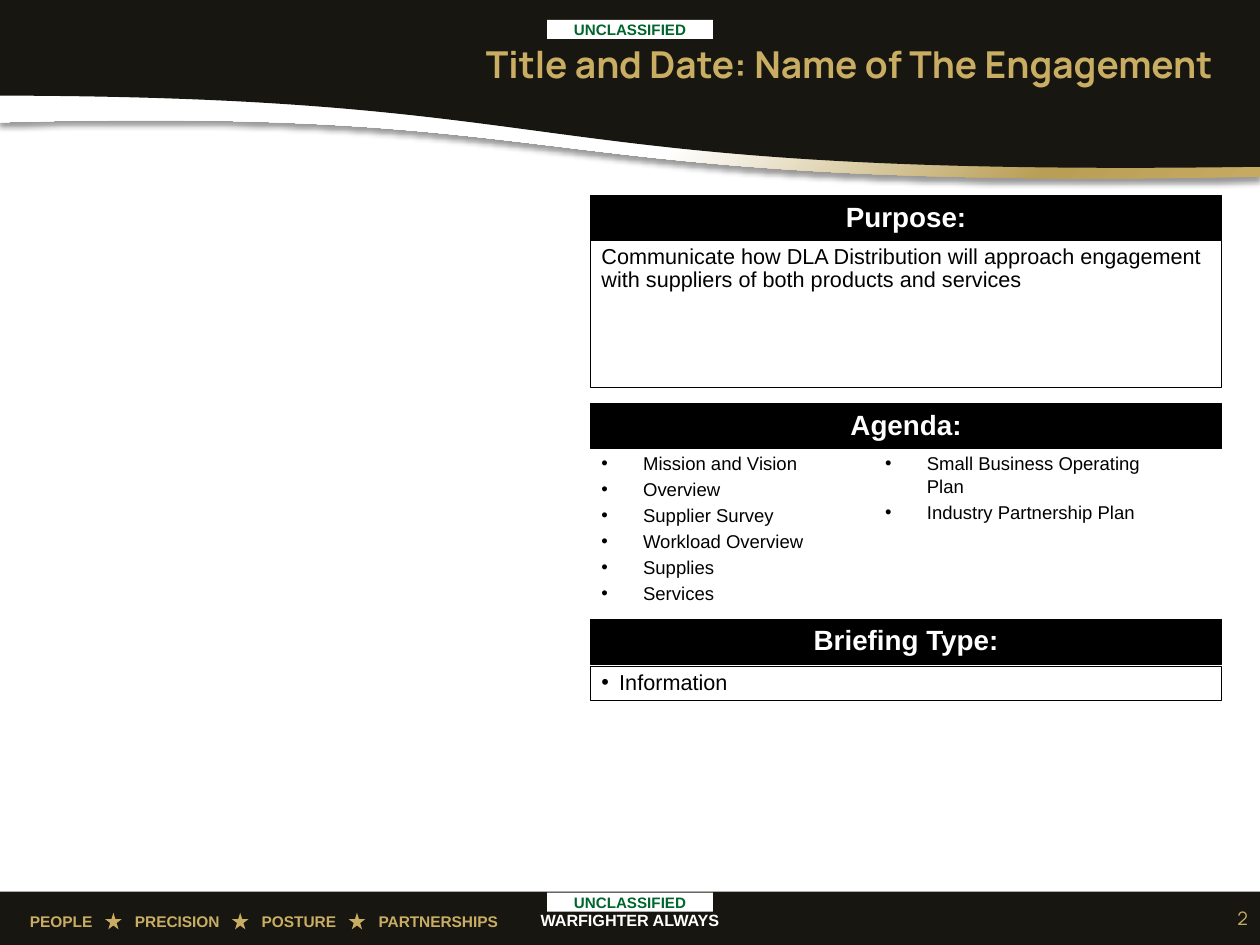
from dataclasses import dataclass

from lxml import etree
from pptx import Presentation
from pptx.dml.color import RGBColor
from pptx.enum.shapes import MSO_SHAPE
from pptx.enum.text import MSO_ANCHOR, PP_ALIGN
from pptx.oxml import parse_xml
from pptx.oxml.ns import nsdecls, qn
from pptx.util import Inches, Pt

RECT, STAR = MSO_SHAPE.RECTANGLE, MSO_SHAPE.STAR_5_POINT
TOP, MID = MSO_ANCHOR.TOP, MSO_ANCHOR.MIDDLE
LEFT, CENTER, RIGHT = PP_ALIGN.LEFT, PP_ALIGN.CENTER, PP_ALIGN.RIGHT

CELL = Inches(0.1)
COLS, ROWS = 113.3, 85
DARK, GOLD, GREEN = "171610", "C9AD62", "00662E"
BLACK, WHITE = "000000", "FFFFFF"
SIDE, SPAN, HEAD = 53.1, 56.75, 4.05


@dataclass(frozen=True)
class Box:
    col: float
    row: float
    wide: float
    high: float


@dataclass(frozen=True)
class Style:
    size: float
    color: str
    bold: bool = False
    align: int = LEFT
    anchor: int = TOP
    font: str = "Arial"
    dent: float = 0
    lead: float = 1
    before: float = 0
    after: float = 0


@dataclass(frozen=True)
class Panel:
    row: float
    title: str
    body: str = ""
    start: float = 0
    high: float = 0
    dent: float = 0
    after: float = 0


PANELS = [
    Panel(17.6, "Purpose:",
          "Communicate how DLA Distribution will approach engagement "
          "with suppliers of both products and services", 21.6, 13.25, after=5.1),
    Panel(36.3, "Agenda:"),
    Panel(55.7, "Briefing Type:", "Information", 59.92, 3.1, 1.6),
]
TOPICS = [
    "Mission and Vision", "Overview", "Supplier Survey",
    "Workload Overview", "Supplies", "Services",
    "Small Business Operating Plan", "Industry Partnership Plan",
]
VALUES = ["PEOPLE", "PRECISION", "POSTURE", "PARTNERSHIPS"]
STARS = [9.45, 20.85, 31.35]


def cells(count: float) -> int:
    return round(count * CELL)


def place(box: Box) -> list[int]:
    return [cells(n) for n in (box.col, box.row, box.wide, box.high)]


def tint(name: str) -> RGBColor:
    return RGBColor.from_string(name)


def paint(shape, fill: str, line: str = ""):
    shape.shadow.inherit = False
    shape.fill.solid()
    shape.fill.fore_color.rgb = tint(fill)
    if line:
        shape.line.color.rgb = tint(line)
        shape.line.width = Pt(0.75)
    else:
        shape.line.fill.background()
    return shape


def write(shape, lines: list[str], style: Style):
    frame = shape.text_frame
    frame.word_wrap = True
    frame.vertical_anchor = style.anchor
    frame.text = "\n".join(lines)
    for index, para in enumerate(frame.paragraphs):
        if style.dent:
            props = para._p.get_or_add_pPr()
            props.set("marL", str(cells(style.dent)))
            props.set("indent", str(-cells(style.dent)))
            etree.SubElement(props, qn("a:buFont")).set("typeface", style.font)
            etree.SubElement(props, qn("a:buChar")).set("char", "•")
            para.font.size = Pt(style.size)
        para.alignment = style.align
        para.line_spacing = style.lead
        para.space_before = Pt(style.before if index else 0)
        para.space_after = Pt(style.after)
        for run in para.runs:
            run.font.name = style.font
            run.font.size = Pt(style.size)
            run.font.bold = style.bold
            run.font.color.rgb = tint(style.color)
    return shape


def block(slide, box: Box, fill: str, line: str = "", kind: int = RECT):
    return paint(slide.shapes.add_shape(kind, *place(box)), fill, line)


def label(slide, box: Box, lines: list[str], style: Style):
    return write(slide.shapes.add_textbox(*place(box)), lines, style)


def wave(slide, top: float, curve: list[tuple[float, float]], fill: str):
    left, end = curve[0], curve[-1]
    spots = [(cells(x), cells(y)) for x, y in [(left[0], top), left, end]]
    build = slide.shapes.build_freeform(cells(end[0]), cells(top))
    build.add_line_segments(spots)
    shape = build.convert_to_shape()
    edge = list(shape._element.iter(qn("a:lnTo")))[2]
    bend = etree.Element(qn("a:cubicBezTo"))
    for x, y in curve[1:]:
        etree.SubElement(bend, qn("a:pt"), x=str(cells(x) - shape.left),
                         y=str(cells(y) - shape.top))
    edge.getparent().replace(edge, bend)
    return paint(shape, fill)


def gild(shape) -> None:
    stops = "".join(
        f'<a:gs pos="{share * 1000}"><a:srgbClr val="{color}"/></a:gs>'
        for share, color in [(55, WHITE), (84, "B99E55"), (100, "C7AA61")])
    props = shape._element.spPr
    blend = parse_xml(
        f'<a:gradFill {nsdecls("a")}><a:gsLst>{stops}</a:gsLst>'
        '<a:path path="circle"><a:fillToRect r="100000" b="100000"/></a:path>'
        '</a:gradFill>')
    props.replace(props.find(qn("a:solidFill")), blend)
    props.find(qn("a:effectLst")).append(parse_xml(
        f'<a:outerShdw {nsdecls("a")} blurRad="{Pt(4)}" dist="{Pt(3)}" '
        'dir="5400000" rotWithShape="0"><a:srgbClr val="000000">'
        '<a:alpha val="40000"/></a:srgbClr></a:outerShdw>'))


def frame(slide) -> None:
    gild(wave(slide, 5.9, [(0, 11), (54.9, 9.5), (45.4, 17.2), (COLS, 15.9)], WHITE))
    wave(slide, -0.1, [(-0.1, 8.6), (54.6, 8.7), (45.2, 16), (COLS, 15)], DARK)
    block(slide, Box(0, 80.2, COLS, 4.8), DARK)
    label(slide, Box(44.7, 81.4, 23.9, 2.8), ["WARFIGHTER ALWAYS"],
          Style(10.5, WHITE, True, CENTER))
    motto = label(slide, Box(1.7, 81.5, 46.1, 2.8), ["\t".join(VALUES)],
                  Style(10, GOLD, True))
    tabs = etree.SubElement(motto.text_frame.paragraphs[0]._p.get_or_add_pPr(),
                            qn("a:tabLst"))
    for col in STARS:
        etree.SubElement(tabs, qn("a:tab"), pos=str(cells(col)), algn="l")
        block(slide, Box(col, 82.1, 1.5, 1.5), GOLD, kind=STAR)
    label(slide, Box(109, 80.3, 4.2, 4.5), ["2"],
          Style(12, GOLD, align=RIGHT, anchor=MID, font="Manrope"))
    for row in (1.8, 80.3):
        write(block(slide, Box(49.2, row, 14.9, 1.7), WHITE), ["UNCLASSIFIED"],
              Style(9.8, GREEN, True, CENTER, MID))


def fill(slide) -> None:
    label(slide, Box(21.5, 3.7, 88.5, 4.1), ["Title and Date: Name of The Engagement"],
          Style(24, GOLD, True, RIGHT, MID, "Manrope"))
    for panel in PANELS:
        write(block(slide, Box(SIDE, panel.row, SPAN, HEAD), BLACK, BLACK),
              [panel.title], Style(18, WHITE, True, CENTER, MID, lead=0.9, after=5.1))
        if panel.body:
            style = Style(14, BLACK, dent=panel.dent, lead=0.9, after=panel.after)
            write(block(slide, Box(SIDE, panel.start, SPAN, panel.high), WHITE, BLACK),
                  [panel.body], style)
    agenda = label(slide, Box(SIDE, 40.2, 53, 17.6), TOPICS,
                   Style(12, BLACK, dent=3.75, before=2.4))
    agenda.text_frame.margin_bottom = cells(2.4)
    agenda.text_frame._txBody.bodyPr.set("numCol", "2")


def main() -> None:
    deck = Presentation()
    deck.slide_width, deck.slide_height = cells(COLS), cells(ROWS)
    slide = deck.slides.add_slide(deck.slide_layouts[6])
    frame(slide)
    fill(slide)
    deck.save("out.pptx")


if __name__ == "__main__":
    main()
